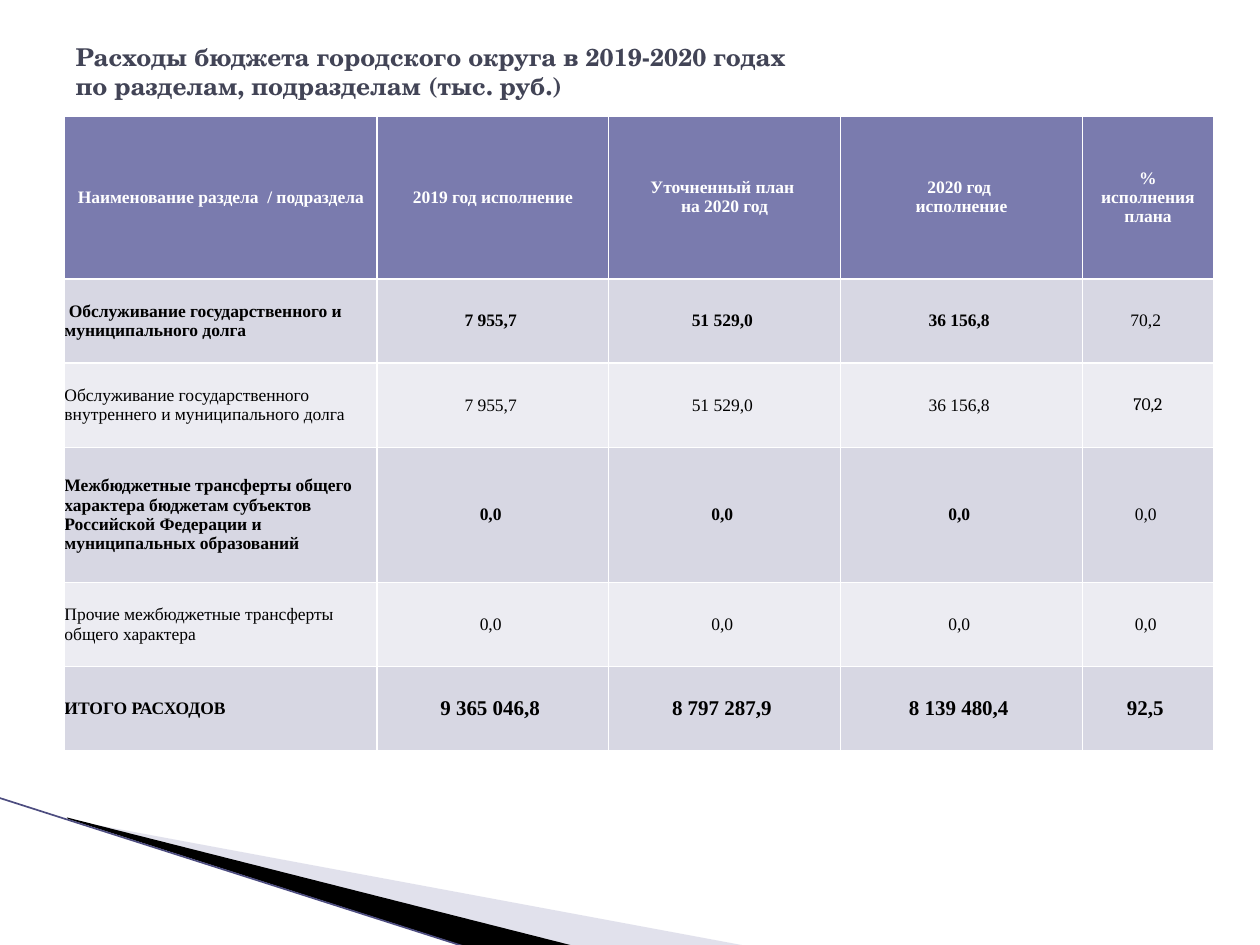
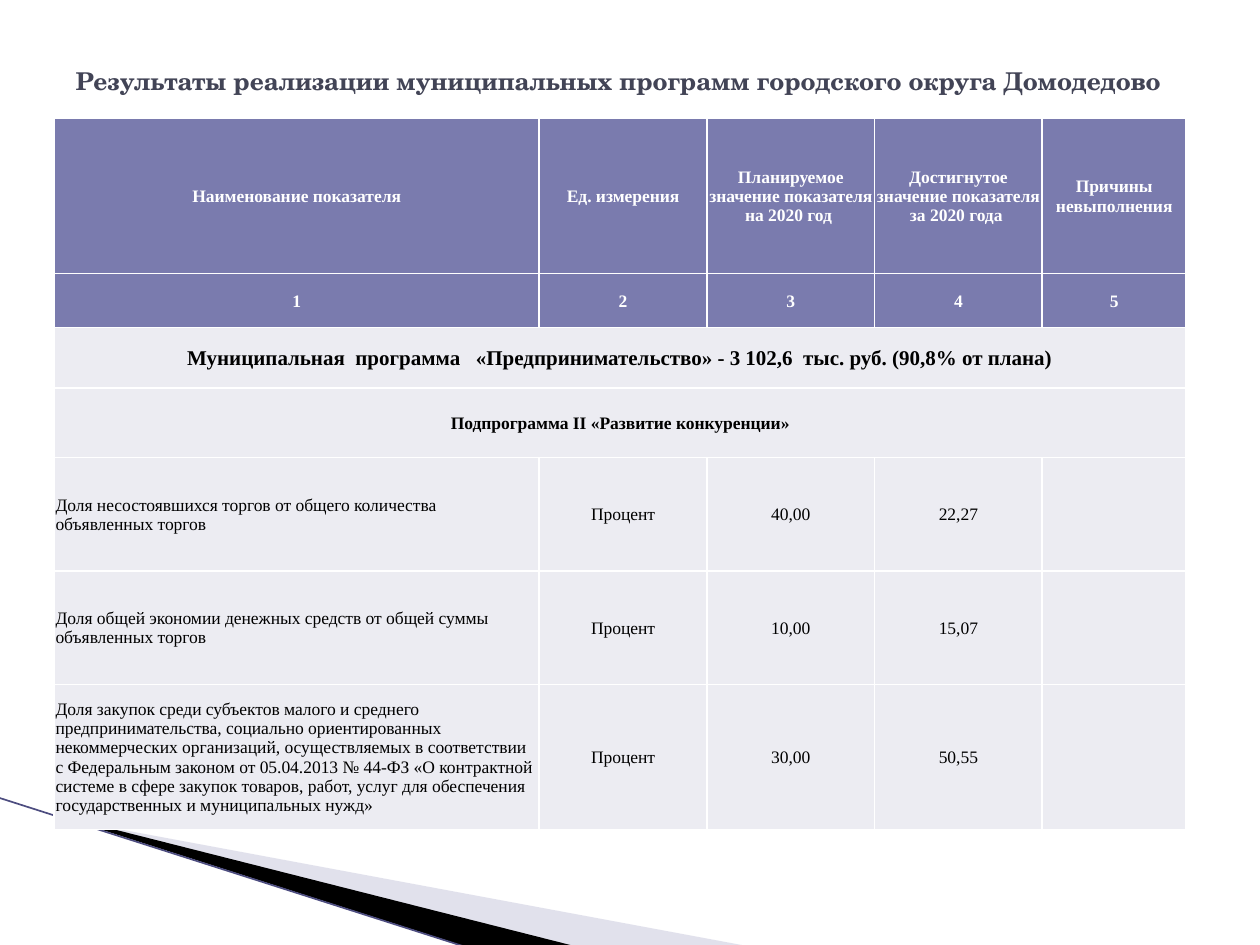
from lxml.etree import SubElement
from pptx import Presentation
from pptx.dml.color import RGBColor
from pptx.enum.shapes import MSO_CONNECTOR
from pptx.enum.text import MSO_ANCHOR, MSO_AUTO_SIZE, PP_ALIGN
from pptx.oxml.ns import qn
from pptx.util import Cm, Pt

# Shared look
HEADER, BAND, PALE = "7A7BAE", "D7D7E3", "ECECF2"
WHITE, BLACK, TITLE = "FFFFFF", "000000", "424456"
TITLE_FONT, TABLE_FONT = "TeX Gyre Schola", "Times New Roman"


def rgb(code):
    return RGBColor.from_string(code)


def fill_cell(cell, text, fill, color=BLACK, bold=False, size=10,
              align=PP_ALIGN.CENTER, insets=(0, 0, 0, 0), font=TABLE_FONT):
    cell.fill.solid()
    cell.fill.fore_color.rgb = rgb(fill)
    cell.vertical_anchor = MSO_ANCHOR.MIDDLE
    (cell.margin_left, cell.margin_top,
     cell.margin_right, cell.margin_bottom) = [Cm(inset) for inset in insets]
    cell.text_frame.text = text
    for paragraph in cell.text_frame.paragraphs:
        paragraph.alignment = align
        for run in paragraph.runs:
            run.font.name = font
            run.font.size = Pt(size)
            run.font.bold = bold
            run.font.color.rgb = rgb(color)


prs = Presentation()
prs.slide_width, prs.slide_height = Cm(25.4), Cm(19.05)
layout = prs.slide_layouts[5]

# Content of the two slides
spending_rows = [
    ["Наименование раздела  / подраздела", "2019 год исполнение",
     "Уточненный план \nна 2020 год", "2020 год \nисполнение",
     "% исполнения плана"],
    [" Обслуживание государственного и муниципального долга",
     "7 955,7 ", "51 529,0 ", "36 156,8 ", "70,2 "],
    ["Обслуживание государственного внутреннего и муниципального долга",
     "7 955,7 ", "51 529,0 ", "36 156,8 ", "70,2"],
    ["Межбюджетные трансферты общего характера бюджетам субъектов "
     "Российской Федерации и муниципальных образований",
     "0,0 ", "0,0 ", "0,0 ", "0,0 "],
    ["Прочие межбюджетные трансферты общего характера",
     "0,0 ", "0,0 ", "0,0 ", "0,0 "],
    ["ИТОГО РАСХОДОВ",
     "9 365 046,8 ", "8 797 287,9 ", "8 139 480,4 ", "92,5 "],
]
indicator_rows = [
    ["Наименование показателя", "Ед. измерения",
     "Планируемое значение показателя на 2020 год ",
     "Достигнутое значение показателя за 2020 года ",
     "Причины невыполнения"],
    ["1", "2", "3", "4", "5"],
    ["Муниципальная  программа   «Предпринимательство» - 3 102,6  тыс. руб. "
     "(90,8% от плана)"],
    ["Подпрограмма II «Развитие конкуренции»"],
    ["Доля несостоявшихся торгов от общего количества объявленных торгов",
     "Процент", "40,00", "22,27", ""],
    ["Доля общей экономии денежных средств от общей суммы объявленных торгов",
     "Процент", "10,00", "15,07", ""],
    ["Доля закупок среди субъектов малого и среднего предпринимательства, "
     "социально ориентированных некоммерческих организаций, осуществляемых "
     "в соответствии с Федеральным законом от 05.04.2013 № 44-ФЗ "
     "«О контрактной системе в сфере закупок товаров, работ, услуг для "
     "обеспечения государственных и муниципальных нужд»",
     "Процент", "30,00", "50,55", ""],
]
# title, title top and height, table left and top, column widths, row heights
pages = [
    ("Расходы бюджета городского округа в 2019-2020 годах \v"
     "по разделам, подразделам (тыс. руб.)", 0.33, 2.21, 1.3, 2.34,
     [6.3, 4.67, 4.67, 4.88, 2.64], [3.28, 1.7, 1.7, 2.72, 1.7, 1.7]),
    ("Результаты реализации муниципальных программ городского округа "
     "Домодедово", 0.76, 1.75, 1.09, 2.39,
     [9.78, 3.38, 3.38, 3.38, 2.9],
     [3.12, 1.09, 1.22, 1.4, 2.29, 2.29, 2.92]),
]

# Titles and empty tables
tables = []
for heading, title_top, title_height, left, top, widths, heights in pages:
    slide = prs.slides.add_slide(layout)
    title = slide.shapes.title
    title.left, title.top = Cm(1.27), Cm(title_top)
    title.width, title.height = Cm(22.86), Cm(title_height)
    frame = title.text_frame
    frame.text = heading
    frame.auto_size = MSO_AUTO_SIZE.NONE
    frame.vertical_anchor = MSO_ANCHOR.MIDDLE
    frame.paragraphs[0].alignment = PP_ALIGN.LEFT
    for run in frame.paragraphs[0].runs:
        run.font.name = TITLE_FONT
        run.font.size = Pt(14)
        run.font.bold = True
        run.font.color.rgb = rgb(TITLE)

    table = slide.shapes.add_table(
        len(heights), len(widths), Cm(left), Cm(top),
        Cm(sum(widths)), Cm(sum(heights))).table
    for column, width in zip(table.columns, widths):
        column.width = Cm(width)
    for row, height in zip(table.rows, heights):
        row.height = Cm(height)
    tables.append(table)
spending, indicators = tables

# Slide 1: spending by section
for r, texts in enumerate(spending_rows):
    total = r == len(spending_rows) - 1
    for c, text in enumerate(texts):
        cell = spending.cell(r, c)
        if r == 0:
            fill_cell(cell, text, HEADER, WHITE, True,
                      insets=(0.25, 0.13, 0.25, 0.13))
            continue
        section = r % 2 == 1
        fill_cell(cell, text, BAND if section else PALE,
                  bold=total or (section and c < 4),
                  size=12 if total and c else 10,
                  align=PP_ALIGN.CENTER if c else PP_ALIGN.LEFT,
                  font="Cambria" if (r, c) == (2, 4) else TABLE_FONT)

# Slide 2: programme indicators
indicators.first_row = False
indicators.horz_banding = False
for r, texts in enumerate(indicator_rows):
    header, programme = r < 2, len(texts) == 1
    if programme:
        indicators.cell(r, 0).merge(indicators.cell(r, 4))
    for c, text in enumerate(texts):
        fill_cell(indicators.cell(r, c), text, HEADER if header else PALE,
                  WHITE if header else BLACK, header or programme,
                  size=12 if r == 2 else 10,
                  align=PP_ALIGN.LEFT if r > 3 and c == 0 else PP_ALIGN.CENTER,
                  insets=(0.03, 0.03, 0.03, 0))

# Corner wedges and line, moved to the layout so both slides share them
shapes = prs.slides[0].shapes
wedges = [
    ("B6B6D1", 40, [(1.4, 16.53), (15.11, 19.08), (11.58, 19.08), (1.4, 16.51)]),
    (BLACK, 100, [(1.35, 16.48), (11.61, 19.08), (9.45, 19.1), (1.37, 16.51)]),
]
corner = []
for color, opacity, points in wedges:
    start, *others = [(Cm(x), Cm(y)) for x, y in points]
    outline = shapes.build_freeform(*start)
    outline.add_line_segments(others, close=True)
    wedge = outline.convert_to_shape()
    wedge.shadow.inherit = False
    wedge.line.fill.background()
    wedge.fill.solid()
    wedge.fill.fore_color.rgb = rgb(color)
    if opacity < 100:
        shade = wedge.element.xpath("./p:spPr/a:solidFill/a:srgbClr")[0]
        SubElement(shade, qn("a:alpha"), val=str(opacity * 1000))
    corner.append(wedge)
edge = shapes.add_connector(MSO_CONNECTOR.STRAIGHT,
                            Cm(-0.03), Cm(16.08), Cm(9.42), Cm(19.1))
edge.line.color.rgb = rgb("4D4D80")
edge.line.width = Pt(0.95)
SubElement(edge.element.spPr, qn("a:effectLst"))
corner.append(edge)
for part in corner:
    layout.shapes.element.append(part.element)

prs.save("out.pptx")
